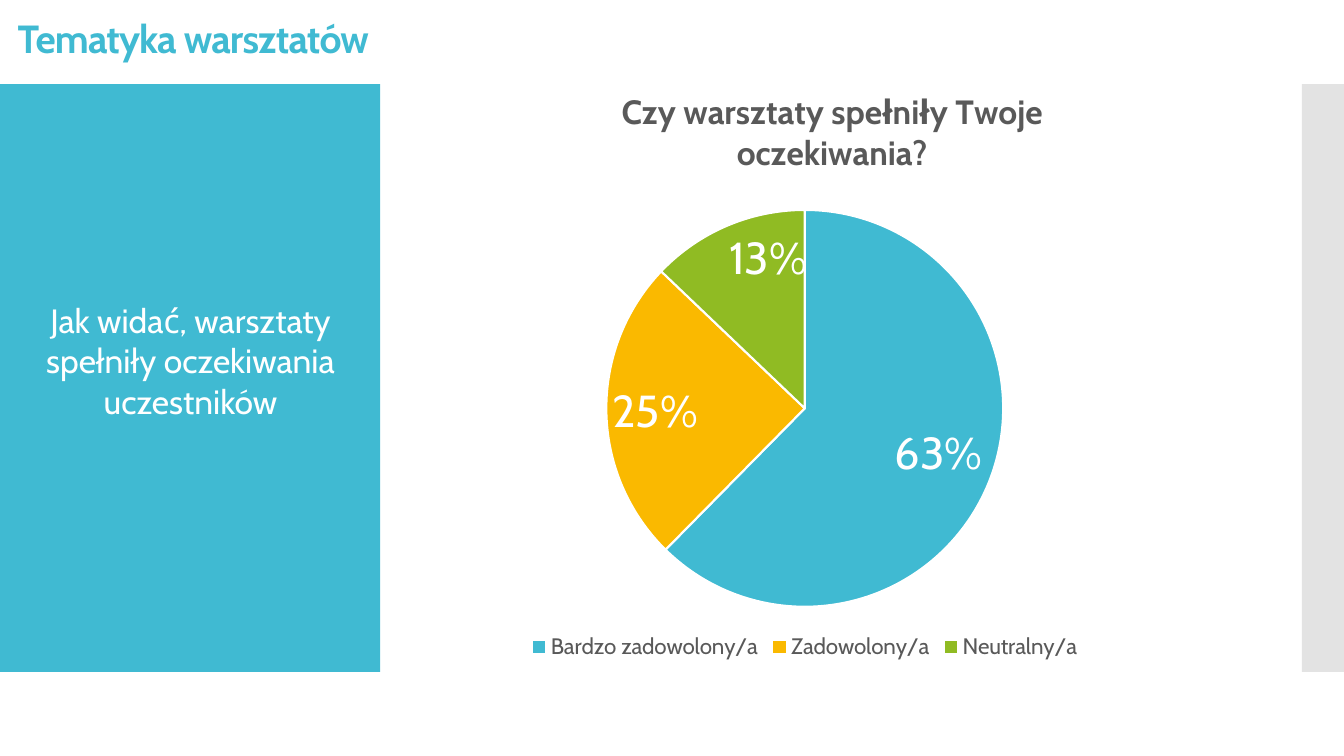
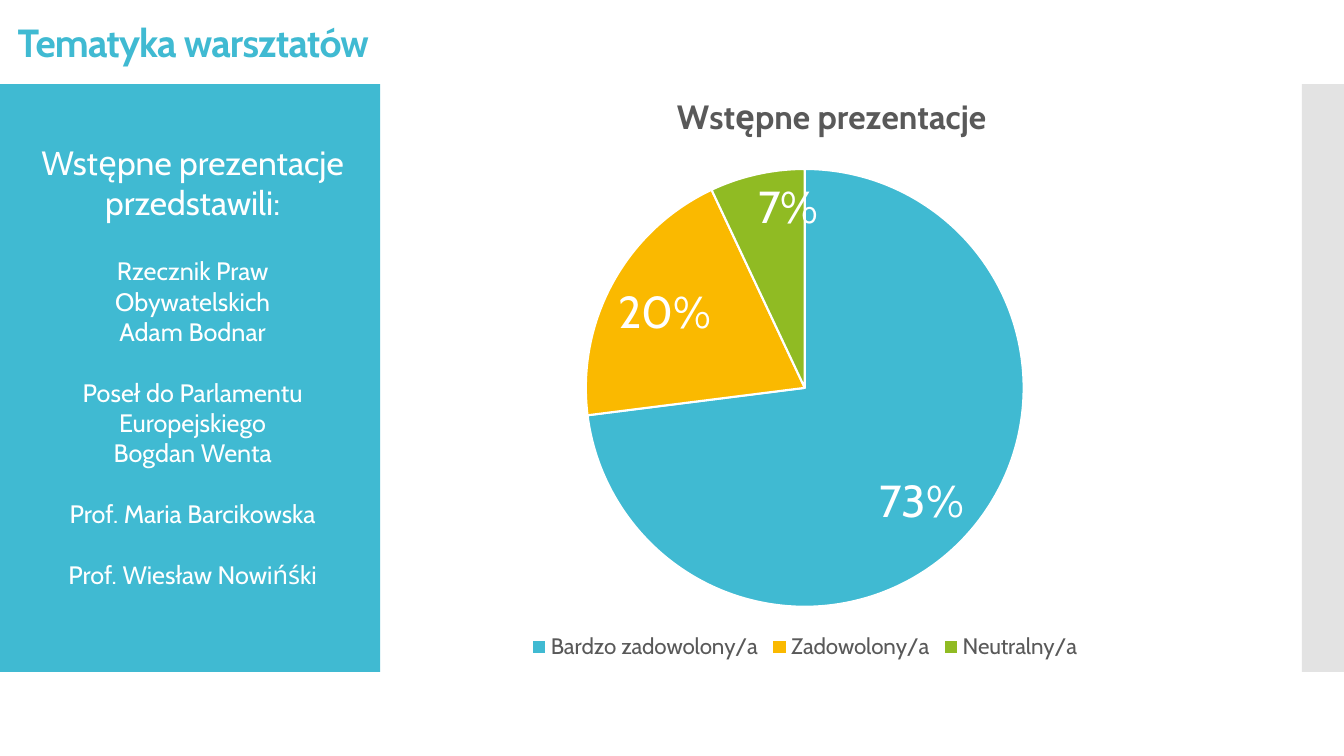
from pptx import Presentation
from pptx import util as u
from pptx.chart import data
from pptx.dml.color import RGBColor
from pptx.enum import chart as ch, shapes, text
from pptx.oxml import parse_xml, ns
from pptx.oxml.ns import qn

PX = 9525
FONT = "Cabin"
BLUE = RGBColor(0x40, 0xBA, 0xD2)
YELLOW = RGBColor(0xFA, 0xB9, 0x00)
GREEN = RGBColor(0x90, 0xBB, 0x23)
GRAY = RGBColor(0xC8, 0xC8, 0xC8)
DARK = RGBColor(0x59, 0x59, 0x59)
WHITE = RGBColor(0xFF, 0xFF, 0xFF)

BAND_TOP, BAND_H = 80, 560
CHART_X, CHART_Y, CHART_W, CHART_H = 406, 73, 721, 560
PIE_BOTTOM = 505
ANSWERS = ("Bardzo zadowolony/a", "Zadowolony/a", "Neutralny/a")


def px(*lengths):
    return [n * PX for n in lengths]


def style(font, size, color, bold=False):
    font.name = FONT
    font.size = u.Pt(size)
    font.color.rgb = color
    font.bold = bold


def layout(x, y, w=None, h=None):
    parts = [("xMode", "edge"), ("yMode", "edge"), ("x", x / CHART_W), ("y", y / CHART_H)]
    if w:
        parts.insert(0, ("layoutTarget", "inner"))
        parts += [("w", w / CHART_W), ("h", h / CHART_H)]
    body = "".join(f'<c:{tag} val="{val}"/>' for tag, val in parts)
    return parse_xml(f'<c:layout {ns.nsdecls("c")}><c:manualLayout>{body}</c:manualLayout></c:layout>')


class Deck:
    def __init__(self):
        self.prs = Presentation()
        self.prs.slide_width, self.prs.slide_height = px(1280, 720)
        self.s = None

    def slide(self, title, top, height):
        self.s = self.prs.slides.add_slide(self.prs.slide_layouts[6])
        self.band(0, 362, BLUE)
        self.band(1240, 40, GRAY, 50)
        self.title(title, top, height)

    def band(self, x, w, color, alpha=100):
        sp = self.s.shapes.add_shape(shapes.MSO_SHAPE.RECTANGLE, *px(x, BAND_TOP, w, BAND_H))
        sp.shadow.inherit = False
        sp.line.fill.background()
        sp.fill.solid()
        sp.fill.fore_color.rgb = color
        if alpha < 100:
            clr = sp._element.spPr.find(".//" + qn("a:srgbClr"))
            clr.append(parse_xml(f'<a:alpha {ns.nsdecls("a")} val="{alpha * 1000}"/>'))

    def box(self, x, y, w, h):
        tf = self.s.shapes.add_textbox(*px(x, y, w, h)).text_frame
        tf.word_wrap = True
        return tf

    def title(self, title, top, height):
        tf = self.box(0, top, 368, height)
        tf.vertical_anchor = text.MSO_ANCHOR.MIDDLE
        p = tf.paragraphs[0]
        p.alignment = text.PP_ALIGN.CENTER
        p.line_spacing = 0.9
        r = p.add_run()
        r.text = title
        style(p.font, 28, BLUE, True)
        r._r.get_or_add_rPr().set("spc", "-60")

    def comment(self, x, y, h, heading, people=()):
        tf = self.box(x, y, 309, h)
        tf.auto_size = text.MSO_AUTO_SIZE.SHAPE_TO_FIT_TEXT
        for i, line in enumerate((heading, *people)):
            p = tf.add_paragraph() if i else tf.paragraphs[0]
            p.text = line
            p.alignment = text.PP_ALIGN.CENTER
            style(p.font, 18 if i else 24, WHITE)
            if i:
                p.space_before = u.Pt(24 if i == 1 else 22)

    def pie(self, title, title_x, values, diameter):
        cd = data.CategoryChartData()
        cd.categories = ANSWERS
        cd.add_series("Series 1", values)
        chart = self.s.shapes.add_chart(
            ch.XL_CHART_TYPE.PIE, *px(CHART_X, CHART_Y, CHART_W, CHART_H), cd).chart
        style(chart.font, 10, DARK)
        self.chart_title(chart, title, title_x)

        chart.has_legend = True
        chart.legend.position = ch.XL_LEGEND_POSITION.BOTTOM
        chart.legend.include_in_layout = False
        style(chart.legend.font, 16, DARK)

        plot = chart.plots[0]
        plot.vary_by_categories = True
        for i, color in enumerate((BLUE, YELLOW, GREEN)):
            fmt = plot.series[0].points[i].format
            fmt.fill.solid()
            fmt.fill.fore_color.rgb = color
            fmt.line.color.rgb = WHITE
            fmt.line.width = u.Pt(1.5)

        plot.has_data_labels = True
        labels = plot.data_labels
        labels.show_value = True
        labels.show_percentage = False
        labels.number_format = '0"%"'
        labels.number_format_is_linked = False
        labels.position = ch.XL_LABEL_POSITION.INSIDE_END
        style(labels.font, 32, WHITE)

        area = chart._chartSpace.chart.plotArea
        for old in area.findall(qn("c:layout")):
            area.remove(old)
        area.insert(0, layout((CHART_W - diameter) / 2, PIE_BOTTOM - diameter, diameter, diameter))

    def chart_title(self, chart, title, x):
        chart.has_title = True
        tf = chart.chart_title.text_frame
        tf.text = title
        for p in tf.paragraphs:
            p.alignment = text.PP_ALIGN.CENTER
            style(p.font, 24, DARK, True)
            for r in p.runs:
                style(r.font, 24, DARK, True)
        el = chart.chart_title._element
        for old in el.findall(qn("c:layout")):
            el.remove(old)
        el.find(qn("c:tx")).addnext(layout(x, 10))
        chart.chart_title.include_in_layout = False


def main():
    deck = Deck()
    heading = "Tematyka warsztatów"

    deck.slide(heading, 4, 69)
    deck.pie("Czy warsztaty spełniły Twoje\noczekiwania?", 183, (63, 25, 13), 378)
    deck.comment(27, 281, 126, "Jak widać, warsztaty spełniły oczekiwania uczestników")

    deck.slide(heading, 0, 86)
    deck.pie("Wstępne prezentacje", 233, (73, 20, 7), 417)
    deck.comment(29, 130, 517, "Wstępne prezentacje przedstawili:", (
        "Rzecznik Praw Obywatelskich\vAdam Bodnar",
        "Poseł do Parlamentu Europejskiego\vBogdan Wenta",
        "Prof. Maria Barcikowska",
        "Prof. Wiesław Nowińśki",
    ))

    deck.prs.save("out.pptx")


if __name__ == "__main__":
    main()
